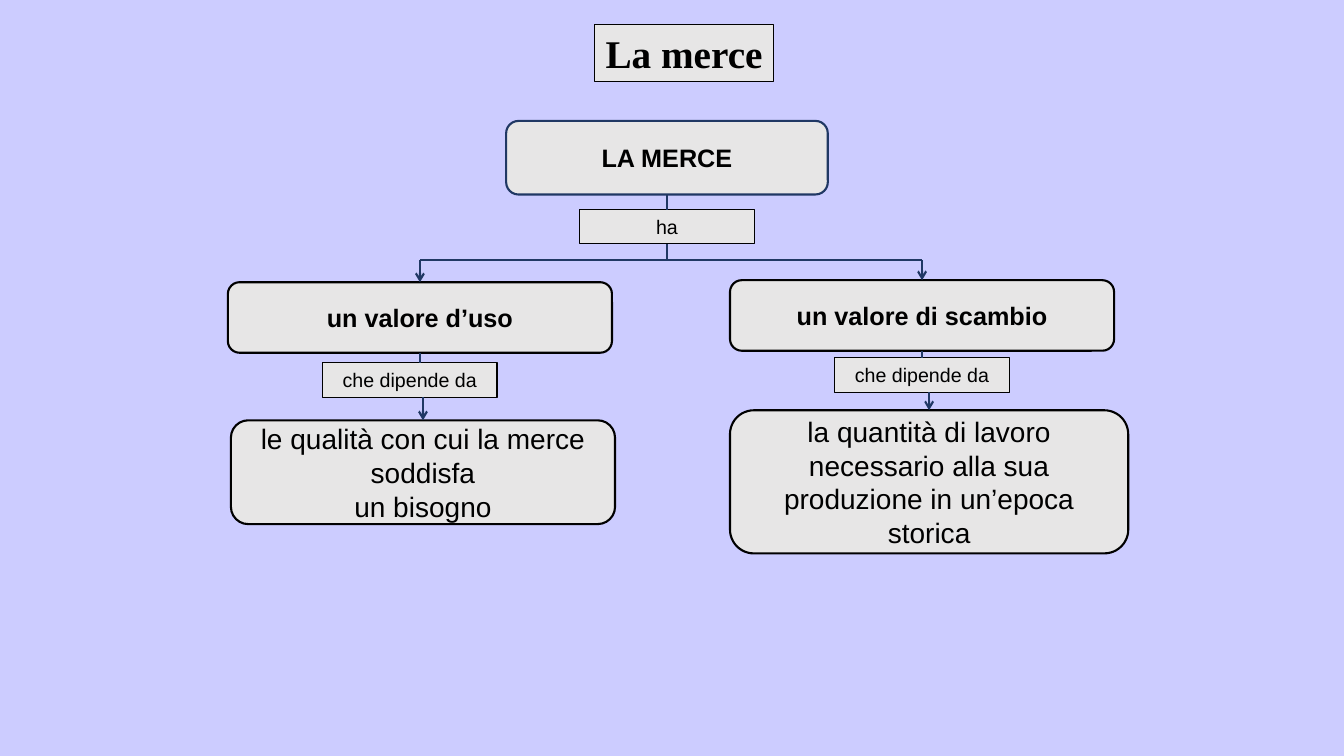
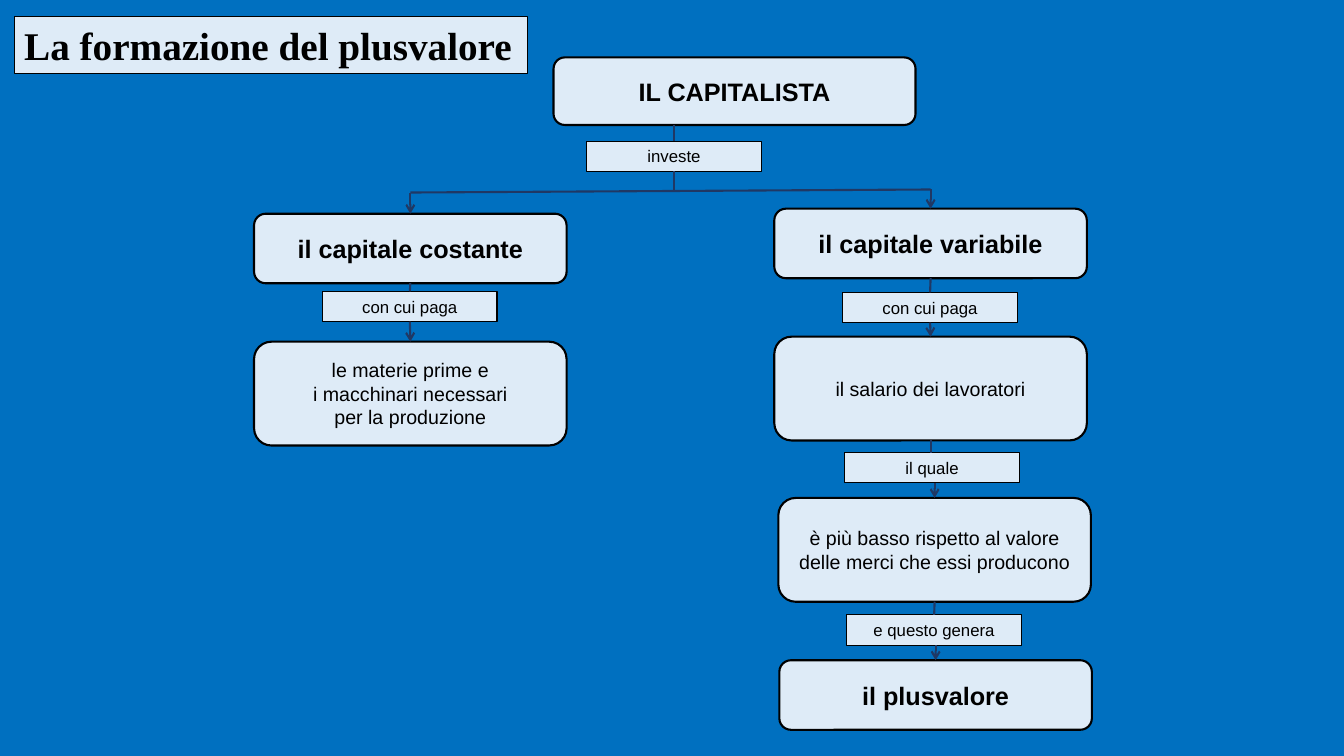
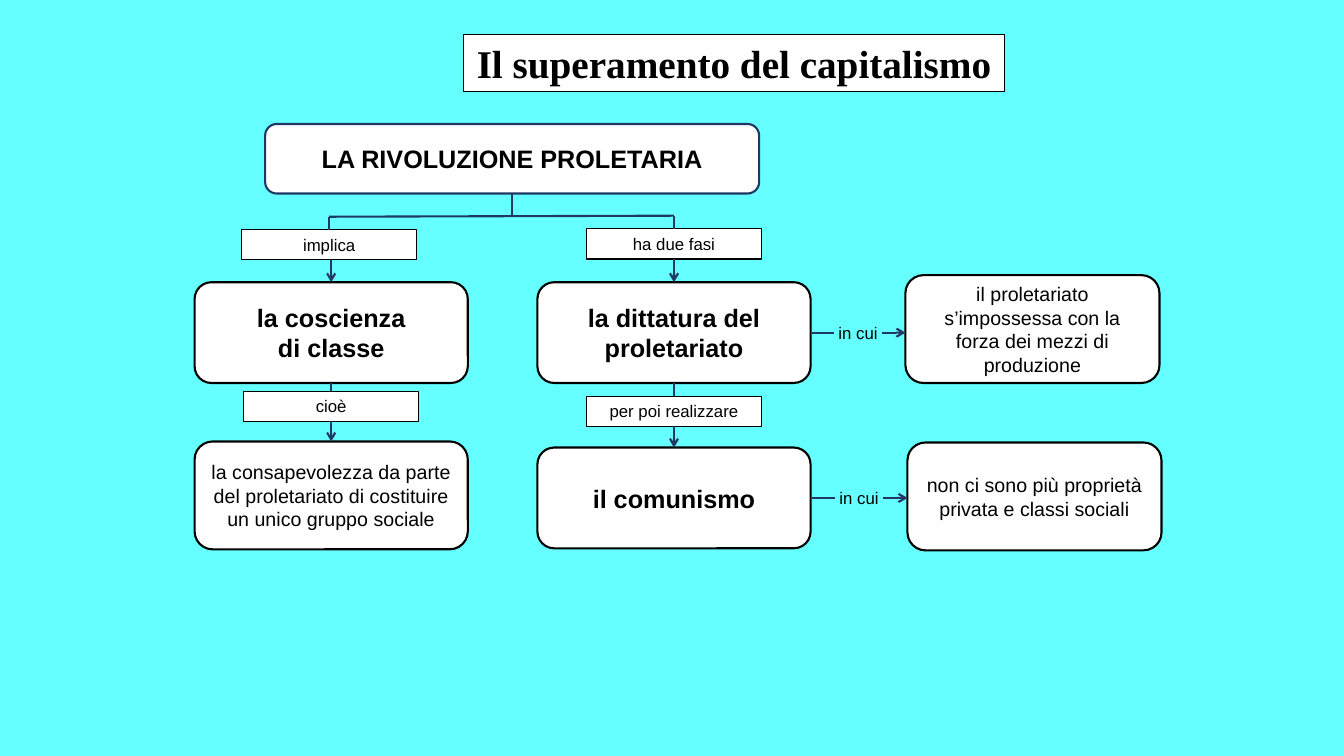
from lxml import etree
from pptx import Presentation
from pptx.dml.color import RGBColor
from pptx.enum.shapes import MSO_CONNECTOR, MSO_SHAPE
from pptx.enum.text import MSO_ANCHOR, MSO_AUTO_SIZE, PP_ALIGN
from pptx.oxml.ns import qn
from pptx.util import Inches, Pt

STRAIGHT = MSO_CONNECTOR.STRAIGHT
RECT, ROUNDED = MSO_SHAPE.RECTANGLE, MSO_SHAPE.ROUNDED_RECTANGLE
TOP, MIDDLE = MSO_ANCHOR.TOP, MSO_ANCHOR.MIDDLE
GROW, FIXED = MSO_AUTO_SIZE.SHAPE_TO_FIT_TEXT, MSO_AUTO_SIZE.NONE
LEFT, CENTER = PP_ALIGN.LEFT, PP_ALIGN.CENTER
SIDE_TOP, SIDE_LEFT, SIDE_BOTTOM, SIDE_RIGHT = range(4)

# Shared look
INK, NAVY = "000000", "203864"
TITLE_FONT, BODY_FONT = "Times New Roman", "Arial"
TITLE_SIZE, HEADING_SIZE = 28, 18
THIN, THICK = 0.75, 1.5
LABEL_WIDTH, LABEL_HEIGHTS = 1.73, {12: 0.3, 14: 0.34}
SIDE_WIDTH, SIDE_HEIGHT, SIDE_INSET = 0.61, 0.3, 0.07
NEAR = 0.01

# Content: boxes are key: (style, (left, top, width, height), text),
# labels are key: (left, top, text)
MAPS = [
    {
        "background": "CCCCFF", "paper": "E7E6E6", "root_line": NAVY,
        "title": ("La merce", (5.9, 0.24, 1.77, 0.57), CENTER),
        "label_size": 14, "detail_size": 20,
        "boxes": {
            "merce": ("root", (5.02, 1.2, 3.19, 0.73), "LA MERCE"),
            "uso": ("heading", (2.26, 2.8, 3.81, 0.7), "un valore d’uso"),
            "scambio": ("heading", (7.24, 2.78, 3.81, 0.7), "un valore di scambio"),
            "qualità": ("detail", (2.29, 4.17, 3.81, 1.03),
                        "le qualità con cui la merce soddisfa\nun bisogno"),
            "quantità": ("detail", (7.24, 4.07, 3.95, 1.42),
                         "la quantità di lavoro necessario alla sua "
                         "produzione in un’epoca storica"),
        },
        "labels": {
            "ha": (5.75, 2.08, "ha"),
            "dipende uso": (3.2, 3.6, "che dipende da"),
            "dipende scambio": (8.28, 3.55, "che dipende da"),
        },
        "chains": [("merce", "ha"), ("uso", "dipende uso", "qualità"),
                   ("scambio", "dipende scambio", "quantità")],
        "fork": ("ha", ("uso", "scambio"), (2.58, 2.58)),
        "sides": [],
    },
    {
        "background": "0070C0", "paper": "DEEBF7", "root_line": INK,
        "title": ("La formazione del plusvalore", (0.14, 0.16, 5.09, 0.57), LEFT),
        "label_size": 12, "detail_size": 14,
        "boxes": {
            "capitalista": ("root", (5.49, 0.57, 3.59, 0.67), "IL CAPITALISTA"),
            "costante": ("heading", (2.52, 2.12, 3.1, 0.69), "il capitale costante"),
            "variabile": ("heading", (7.68, 2.07, 3.1, 0.69), "il capitale variabile"),
            "materie": ("detail", (2.52, 3.39, 3.1, 1.03),
                        "le materie prime e\ni macchinari necessari\n"
                        "per la produzione"),
            "salario": ("detail", (7.68, 3.34, 3.1, 1.03), "il salario dei lavoratori"),
            "basso": ("detail", (7.72, 4.94, 3.1, 1.03),
                      "è più basso rispetto al valore delle merci che essi producono"),
            "plusvalore": ("heading", (7.73, 6.55, 3.1, 0.69), "il plusvalore"),
        },
        "labels": {
            "investe": (5.82, 1.4, "investe"),
            "paga costante": (3.2, 2.89, "con cui paga"),
            "paga variabile": (8.36, 2.9, "con cui paga"),
            "quale": (8.38, 4.49, "il quale"),
            "genera": (8.4, 6.1, "e questo genera"),
        },
        "chains": [("capitalista", "investe"),
                   ("costante", "paga costante", "materie"),
                   ("variabile", "paga variabile", "salario", "quale", "basso",
                    "genera", "plusvalore")],
        "fork": ("investe", ("costante", "variabile"), (1.91, 1.88)),
        "sides": [],
    },
    {
        "background": "66FFFF", "paper": "FFFFFF", "root_line": NAVY,
        "title": ("Il superamento del capitalismo", (4.6, 0.34, 5.36, 0.57), CENTER),
        "label_size": 12, "detail_size": 14,
        "boxes": {
            "rivoluzione": ("root", (2.63, 1.23, 4.9, 0.69), "LA RIVOLUZIONE PROLETARIA"),
            "coscienza": ("heading", (1.93, 2.8, 2.71, 1), "la coscienza\vdi classe"),
            "dittatura": ("heading", (5.33, 2.8, 2.71, 1), "la dittatura del proletariato"),
            "consapevolezza": ("detail", (1.93, 4.38, 2.71, 1.07),
                               "la consapevolezza da parte del proletariato "
                               "di costituire un unico gruppo sociale"),
            "comunismo": ("heading", (5.33, 4.44, 2.71, 1), "il comunismo"),
            "mezzi": ("detail", (8.98, 2.73, 2.52, 1.07),
                      "il proletariato s’impossessa con la forza dei mezzi di produzione"),
            "proprietà": ("detail", (9, 4.39, 2.52, 1.07),
                          "non ci sono più proprietà privata e classi sociali"),
        },
        "labels": {
            "implica": (2.4, 2.28, "implica"),
            "fasi": (5.82, 2.27, "ha due fasi"),
            "cioè": (2.42, 3.88, "cioè"),
            "realizzare": (5.82, 3.93, "per poi realizzare"),
        },
        "chains": [("implica", "coscienza", "cioè", "consapevolezza"),
                   ("fasi", "dittatura", "realizzare", "comunismo")],
        "fork": ("rivoluzione", ("implica", "fasi"), (2.15, 2.14)),
        "sides": [("dittatura", "mezzi", "in cui"),
                  ("comunismo", "proprietà", "in cui")],
    },
]


def color(value):
    return RGBColor.from_string(value)


def paint(shape, fill, outline, width):
    shape.fill.solid()
    shape.fill.fore_color.rgb = color(fill)
    shape.line.color.rgb = color(outline)
    shape.line.width = Pt(width)


def write(shape, text, size, bold=False, font=BODY_FONT, align=CENTER, **frame_format):
    frame = shape.text_frame
    settings = {"word_wrap": True, "auto_size": GROW, "vertical_anchor": TOP}
    for name, value in {**settings, **frame_format}.items():
        setattr(frame, name, value)
    frame.text = text
    for paragraph in frame.paragraphs:
        paragraph.alignment = align
        for run in paragraph.runs:
            for name, value in {"size": Pt(size), "bold": bold, "name": font}.items():
                setattr(run.font, name, value)
            run.font.color.rgb = color(INK)


def side_point(at, side):
    left, top, width, height = at
    return {SIDE_TOP: (left + width / 2, top),
            SIDE_LEFT: (left, top + height / 2),
            SIDE_BOTTOM: (left + width / 2, top + height),
            SIDE_RIGHT: (left + width, top + height / 2)}[side]


class ConceptMap:
    def __init__(self, slide, content):
        self.slide, self.content = slide, content
        self.nodes = {}  # key: (shape, place, style)

    def add_title(self):
        text, place, align = self.content["title"]
        title = self.slide.shapes.title
        title.left, title.top, title.width, title.height = map(Inches, place)
        paint(title, self.content["paper"], INK, THIN)
        write(title, text, TITLE_SIZE, True, TITLE_FONT, align,
              word_wrap=False, auto_size=FIXED)

    def add_node(self, key, style, place, text):
        is_label = style == "label"
        node = self.slide.shapes.add_shape(RECT if is_label else ROUNDED,
                                           *map(Inches, place))
        node.shadow.inherit = False
        outline = self.content["root_line"] if style == "root" else INK
        paint(node, self.content["paper"], outline, THIN if is_label else THICK)
        if is_label:
            write(node, text, self.content["label_size"])
        else:
            heading = style != "detail"
            write(node, text, HEADING_SIZE if heading else self.content["detail_size"],
                  heading, auto_size=FIXED, vertical_anchor=MIDDLE)
        self.nodes[key] = (node, place, style)

    def link(self, start, end, arrow=False, source=None, target=None):
        """Draw a line; join it to (key, side) ends that it really meets."""
        line = self.slide.shapes.add_connector(STRAIGHT, *map(Inches, start + end))
        line.line.color.rgb = color(NAVY)
        line.line.width = Pt(THICK)
        properties = line._element.spPr
        if arrow:
            etree.SubElement(properties.find(qn("a:ln")), qn("a:tailEnd"), type="arrow")
        etree.SubElement(properties, qn("a:effectLst"))
        for point, joint, join in ((start, source, line.begin_connect),
                                   (end, target, line.end_connect)):
            if joint:
                shape, place, _ = self.nodes[joint[0]]
                middle = side_point(place, joint[1])
                if max(abs(a - b) for a, b in zip(point, middle)) <= NEAR:
                    join(shape, joint[1])

    def link_down(self, upper, lower):
        source, target = (upper, SIDE_BOTTOM), (lower, SIDE_TOP)
        upper_x, start_y = side_point(self.nodes[upper][1], SIDE_BOTTOM)
        lower_x, end_y = side_point(self.nodes[lower][1], SIDE_TOP)
        x = upper_x if self.nodes[upper][2] in ("heading", "detail") else lower_x
        self.link((x, start_y), (x, end_y), self.nodes[lower][2] != "label",
                  source, target)

    def add_fork(self, parent, children, bar_ys):
        x, y = side_point(self.nodes[parent][1], SIDE_BOTTOM)
        self.link((x, y), (x, sum(bar_ys) / 2), source=(parent, SIDE_BOTTOM))
        bar = []
        for child, bar_y in zip(children, bar_ys):
            _, place, style = self.nodes[child]
            tip = side_point(place, SIDE_TOP)
            bar.append((tip[0], bar_y))
            self.link(bar[-1], tip, style != "label", target=(child, SIDE_TOP))
        self.link(*bar)

    def add_side(self, left_key, right_key, text):
        x, y = side_point(self.nodes[left_key][1], SIDE_RIGHT)
        end_x = self.nodes[right_key][1][0]
        text_left = (x + end_x - SIDE_WIDTH) / 2
        caption = self.slide.shapes.add_textbox(
            *map(Inches, (text_left, y - SIDE_HEIGHT / 2, SIDE_WIDTH, SIDE_HEIGHT)))
        write(caption, text, self.content["label_size"])
        self.link((x, y), (text_left + SIDE_INSET, y), source=(left_key, SIDE_RIGHT))
        self.link((text_left + SIDE_WIDTH - SIDE_INSET, y), (end_x, y), True,
                  target=(right_key, SIDE_LEFT))

    def build(self):
        content = self.content
        background = self.slide.background.fill
        background.solid()
        background.fore_color.rgb = color(content["background"])
        self.add_title()
        # Boxes and labels
        for key, box in content["boxes"].items():
            self.add_node(key, *box)
        label_height = LABEL_HEIGHTS[content["label_size"]]
        for key, (left, top, text) in content["labels"].items():
            self.add_node(key, "label", (left, top, LABEL_WIDTH, label_height), text)
        # Lines and arrows
        for chain in content["chains"]:
            for upper, lower in zip(chain, chain[1:]):
                self.link_down(upper, lower)
        self.add_fork(*content["fork"])
        for side in content["sides"]:
            self.add_side(*side)


def main():
    deck = Presentation()
    deck.slide_width, deck.slide_height = Inches(13.33), Inches(7.5)
    title_only = deck.slide_layouts[5]
    for content in MAPS:
        ConceptMap(deck.slides.add_slide(title_only), content).build()
    deck.save("out.pptx")


if __name__ == "__main__":
    main()
